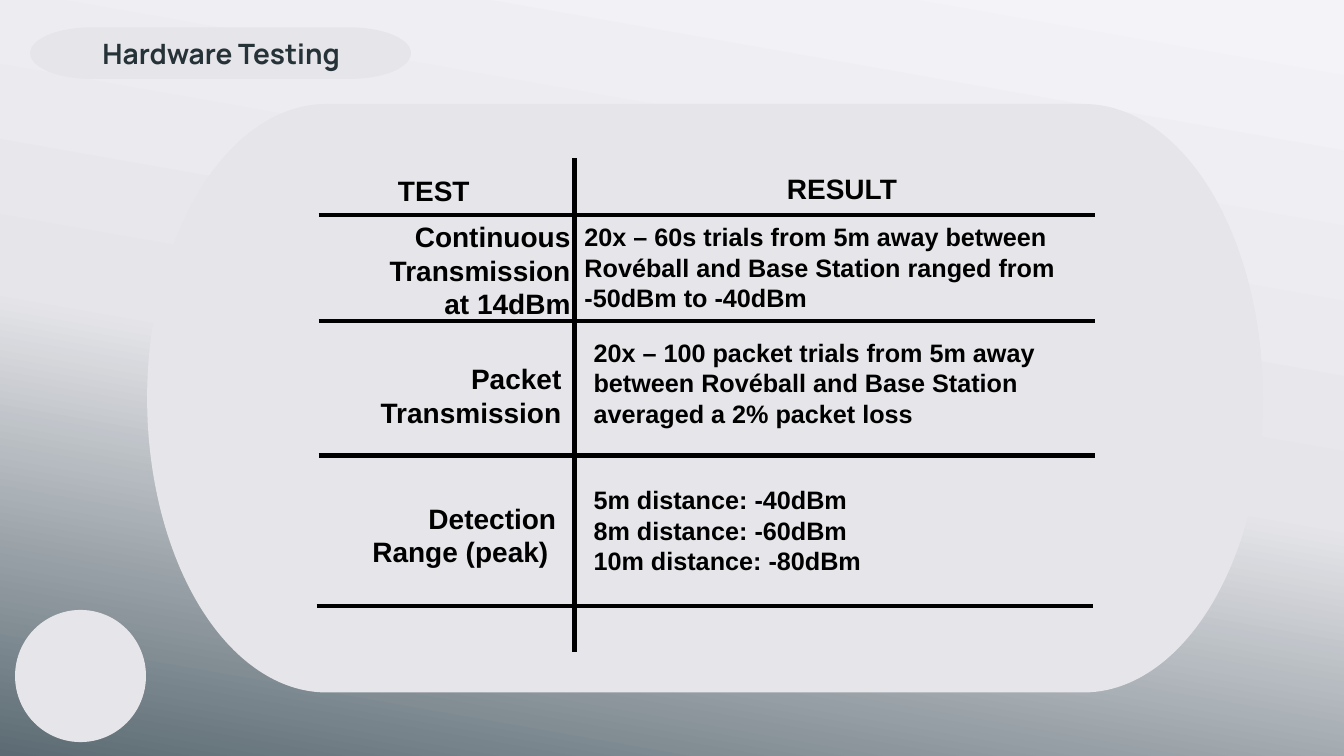
from copy import deepcopy
from dataclasses import dataclass

from lxml.etree import SubElement
from pptx import Presentation
from pptx.dml.color import RGBColor
from pptx.enum.shapes import MSO_CONNECTOR, MSO_SHAPE
from pptx.enum.text import MSO_ANCHOR, MSO_AUTO_SIZE, PP_ALIGN
from pptx.oxml.ns import qn
from pptx.slide import Slide
from pptx.text.text import TextFrame
from pptx.util import Cm, Pt


@dataclass(frozen=True)
class Theme:
    panel: RGBColor = RGBColor(0xE6, 0xE6, 0xEA)
    title: RGBColor = RGBColor(0x25, 0x32, 0x37)
    ink: RGBColor = RGBColor(0, 0, 0)
    backdrop: tuple[tuple[float, str], ...] = (
        (0, "F4F4F8"), (0.53, "E6E6EA"), (1, "5C6B73"))
    backdrop_angle: int = 260
    title_font: str = "Manrope"
    body_font: str = "Arial"
    large: int = 20
    small: int = 18
    rule: int = 3


THEME = Theme()


@dataclass(frozen=True)
class Box:
    """A rectangle in centimetres."""
    x: float
    y: float
    w: float
    h: float

    def emu(self) -> tuple[Cm, Cm, Cm, Cm]:
        return Cm(self.x), Cm(self.y), Cm(self.w), Cm(self.h)


@dataclass(frozen=True)
class Panel:
    kind: MSO_SHAPE
    box: Box


@dataclass(frozen=True)
class Rule:
    """A straight line running w across and h down from x, y."""
    box: Box


@dataclass(frozen=True)
class Label:
    box: Box
    lines: tuple[str, ...]
    size: int = THEME.large
    align: PP_ALIGN = PP_ALIGN.LEFT


PANELS = (
    Panel(MSO_SHAPE.OVAL, Box(0.38, 15.37, 3.3, 3.33)),
    Panel(MSO_SHAPE.FLOWCHART_TERMINATOR, Box(0.76, 0.69, 9.6, 1.3)),
    Panel(MSO_SHAPE.FLOWCHART_TERMINATOR, Box(3.71, 2.62, 28.12, 14.83)),
)
TITLE_BOX = Box(1.7, 0.79, 7.75, 1.12)

ROW_RULES = ((8.03, 5.41), (8.03, 8.08), (8.03, 11.48), (7.98, 15.27))
RULES = tuple(Rule(Box(x, y, 19.56, 0)) for x, y in ROW_RULES) + (
    Rule(Box(14.48, 3.99, 0, 12.44)),)

HEADINGS = (
    Label(Box(9.78, 4.24, 2.74, 1.12), ("TEST",)),
    Label(Box(19.58, 4.19, 5.92, 1.12), ("RESULT",)),
)
TESTS = tuple(Label(box, (text,), align=PP_ALIGN.RIGHT) for box, text in (
    (Box(8.76, 5.41, 5.87, 2.84), "Continuous Transmission at 14dBm"),
    (Box(9.22, 8.99, 5.18, 1.96), "Packet Transmission"),
    (Box(9.09, 12.5, 5.18, 1.96), "Detection Range (peak) "),
))
RESULTS = tuple(
    Label(Box(x, y, 13.11, 2.57), lines, THEME.small) for x, y, lines in (
        (14.48, 5.46, ("20x – 60s trials from 5m away between Rovéball and "
                       "Base Station ranged from -50dBm to -40dBm",)),
        (14.71, 8.38, ("20x – 100 packet trials from 5m away between Rovéball "
                       "and Base Station averaged a 2% packet loss",)),
        (14.71, 12.09, ("5m distance: -40dBm", "8m distance: -60dBm",
                        "10m distance: -80dBm")),
    ))


def paint_backdrop(s: Slide) -> None:
    fill = s.background.fill
    fill.gradient()
    fill.gradient_angle = THEME.backdrop_angle
    gs_list = next(s.background._cSld.iter(qn("a:gsLst")))
    gs_list.append(deepcopy(gs_list[0]))  # a new gradient has two stops only
    for stop, (position, colour) in zip(fill.gradient_stops, THEME.backdrop):
        stop.position = position
        stop.color.rgb = RGBColor.from_string(colour)


def add_panel(s: Slide, panel: Panel) -> None:
    sp = s.shapes.add_shape(panel.kind, *panel.box.emu())
    sp.shadow.inherit = False
    sp.fill.solid()
    sp.fill.fore_color.rgb = THEME.panel
    sp.line.fill.background()


def add_rule(s: Slide, rule: Rule) -> None:
    x, y, w, h = rule.box.emu()
    line = s.shapes.add_connector(MSO_CONNECTOR.STRAIGHT, x, y, x + w, y + h)
    line.line.color.rgb = THEME.ink
    line.line.width = Pt(THEME.rule)
    SubElement(line._element.spPr, qn("a:effectLst"))


def write(tf: TextFrame, lines: tuple[str, ...], size: int, font: str,
          colour: RGBColor, align: PP_ALIGN) -> None:
    tf.word_wrap = True
    tf.auto_size = MSO_AUTO_SIZE.NONE
    tf.vertical_anchor = MSO_ANCHOR.TOP
    tf.text = "\n".join(lines)
    for p in tf.paragraphs:
        p.alignment = align
        p.font.name = font
        p.font.size = Pt(size)
        p.font.bold = True
        p.font.color.rgb = colour


def add_label(s: Slide, label: Label) -> None:
    tf = s.shapes.add_textbox(*label.box.emu()).text_frame
    write(tf, label.lines, label.size, THEME.body_font, THEME.ink, label.align)


def place_title(s: Slide, text: str) -> None:
    """Fill the title placeholder and bring it in front of the panels."""
    title = s.shapes.title
    title.left, title.top, title.width, title.height = TITLE_BOX.emu()
    write(title.text_frame, (text,), THEME.large, THEME.title_font,
          THEME.title, PP_ALIGN.CENTER)
    s.shapes._spTree.append(title._element)


def main() -> None:
    prs = Presentation()
    prs.slide_width, prs.slide_height = Cm(33.87), Cm(19.05)
    s = prs.slides.add_slide(prs.slide_layouts.get_by_name("Title Only"))
    paint_backdrop(s)
    for panel in PANELS:
        add_panel(s, panel)
    place_title(s, "Hardware Testing")
    for rule in RULES:
        add_rule(s, rule)
    for label in HEADINGS + TESTS + RESULTS:
        add_label(s, label)
    prs.save("out.pptx")


if __name__ == "__main__":
    main()
